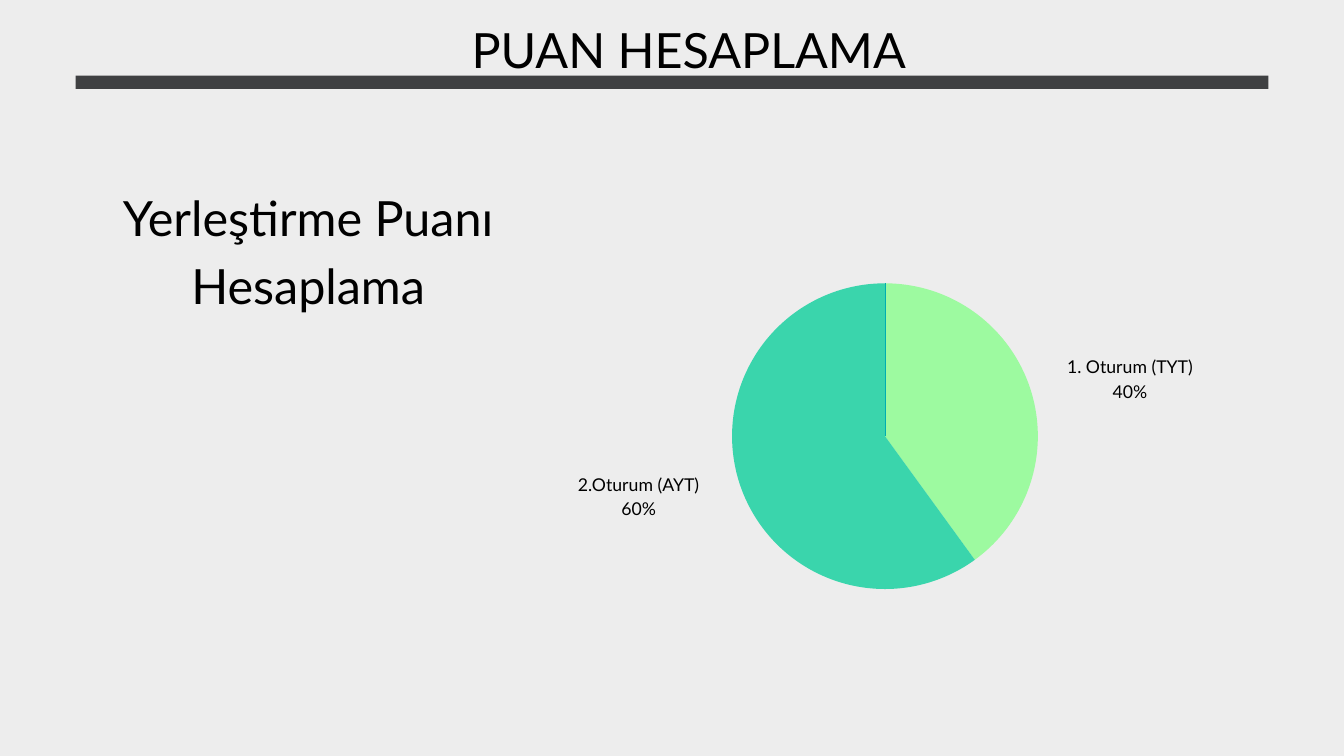
from lxml.etree import SubElement
from pptx import Presentation
from pptx.chart.data import CategoryChartData
from pptx.dml.color import RGBColor
from pptx.enum.chart import XL_CHART_TYPE
from pptx.enum.shapes import MSO_CONNECTOR, MSO_SHAPE
from pptx.enum.text import PP_ALIGN
from pptx.oxml.ns import qn
from pptx.util import Cm, Pt

FONT = "Lato"
BACKGROUND, RULE, INK, SEAM = "EDEDED", "3F4042", "000000", "00ADB2"

# text, (left, top, width, height) in cm, size, line spacing in points
HEADINGS = [
    ("PUAN HESAPLAMA", (17.16, 0.38, 17.75, 2.59), 52, 72.8),
    ("Yerleştirme Puanı Hesaplama", (2, 6.73, 19.3, 5.21), 52, 72.8),
]
# session, share in percent, colour, label box in cm
SESSIONS = [
    ("1. Oturum (TYT)", 40, "9DFAA0", (40.29, 13.32, 4.85, 1.8)),
    ("2.Oturum (AYT)", 60, "3AD5AC", (21.65, 17.77, 4.98, 1.8)),
]
PIE_CENTRE = (33.45, 16.49)
PIE_RADIUS = 5.78


def rgb(value):
    return RGBColor.from_string(value)


def box(values):
    return [Cm(value) for value in values]


def add_text(slide, text, place, size, spacing):
    frame = slide.shapes.add_textbox(*box(place)).text_frame
    frame.word_wrap = True
    frame.margin_left = frame.margin_right = frame.margin_top = frame.margin_bottom = 0
    frame.text = text
    for paragraph in frame.paragraphs:
        paragraph.alignment = PP_ALIGN.CENTER
        paragraph.line_spacing = Pt(spacing)
        for run in paragraph.runs:
            run.font.name = FONT
            run.font.size = Pt(size)
            run.font.color.rgb = rgb(INK)


def fill_frame(chart):
    """Stretch the plot area over the whole chart frame."""
    plot_area = chart.plots[0]._element.getparent()
    layout = plot_area.find(qn("c:layout"))
    if layout is None:
        layout = SubElement(plot_area, qn("c:layout"))
        plot_area.insert(0, layout)
    manual = SubElement(layout, qn("c:manualLayout"))
    settings = [("layoutTarget", "inner"), ("xMode", "edge"), ("yMode", "edge"),
                ("x", "0"), ("y", "0"), ("w", "1"), ("h", "1")]
    for tag, value in settings:
        SubElement(manual, qn(f"c:{tag}")).set("val", value)


def add_pie(slide):
    data = CategoryChartData(number_format='0"%"')
    data.categories = [session for session, *_ in SESSIONS]
    data.add_series("Yerleştirme Puanı", [share for _, share, *_ in SESSIONS])
    left, top = (centre - PIE_RADIUS for centre in PIE_CENTRE)
    place = box((left, top, 2 * PIE_RADIUS, 2 * PIE_RADIUS))
    chart = slide.shapes.add_chart(XL_CHART_TYPE.PIE, *place, data).chart
    chart.has_legend = False
    chart.has_title = False
    chart.font.name = FONT
    chart.font.size = Pt(18.9)
    chart.font.color.rgb = rgb(INK)
    chart.plots[0].vary_by_categories = True
    fill_frame(chart)
    for index, (_, _, colour, _) in enumerate(SESSIONS):
        slice_format = chart.plots[0].series[0].points[index].format
        slice_format.fill.solid()
        slice_format.fill.fore_color.rgb = rgb(colour)
        slice_format.line.fill.background()


def add_seam(slide):
    """Draw the hairline from the top of the pie to its centre."""
    x, y = PIE_CENTRE
    seam = slide.shapes.add_connector(MSO_CONNECTOR.STRAIGHT, *box((x, y - PIE_RADIUS, x, y)))
    seam.line.color.rgb = rgb(SEAM)
    seam.line.width = Pt(0.25)
    SubElement(seam._element.spPr, qn("a:effectLst"))


def main():
    deck = Presentation()
    deck.slide_width, deck.slide_height = Cm(50.8), Cm(28.58)
    slide = deck.slides.add_slide(deck.slide_layouts[6])
    slide.background.fill.solid()
    slide.background.fill.fore_color.rgb = rgb(BACKGROUND)

    rule = slide.shapes.add_shape(MSO_SHAPE.RECTANGLE, *box((2.86, 2.86, 45.08, 0.5)))
    rule.shadow.inherit = False
    rule.fill.solid()
    rule.fill.fore_color.rgb = rgb(RULE)
    rule.line.fill.background()

    for heading in HEADINGS:
        add_text(slide, *heading)
    add_pie(slide)
    add_seam(slide)
    for session, share, _, place in SESSIONS:
        add_text(slide, f"{session}\n{share}%", place, 18.9, 26.5)

    deck.save("out.pptx")


if __name__ == "__main__":
    main()
